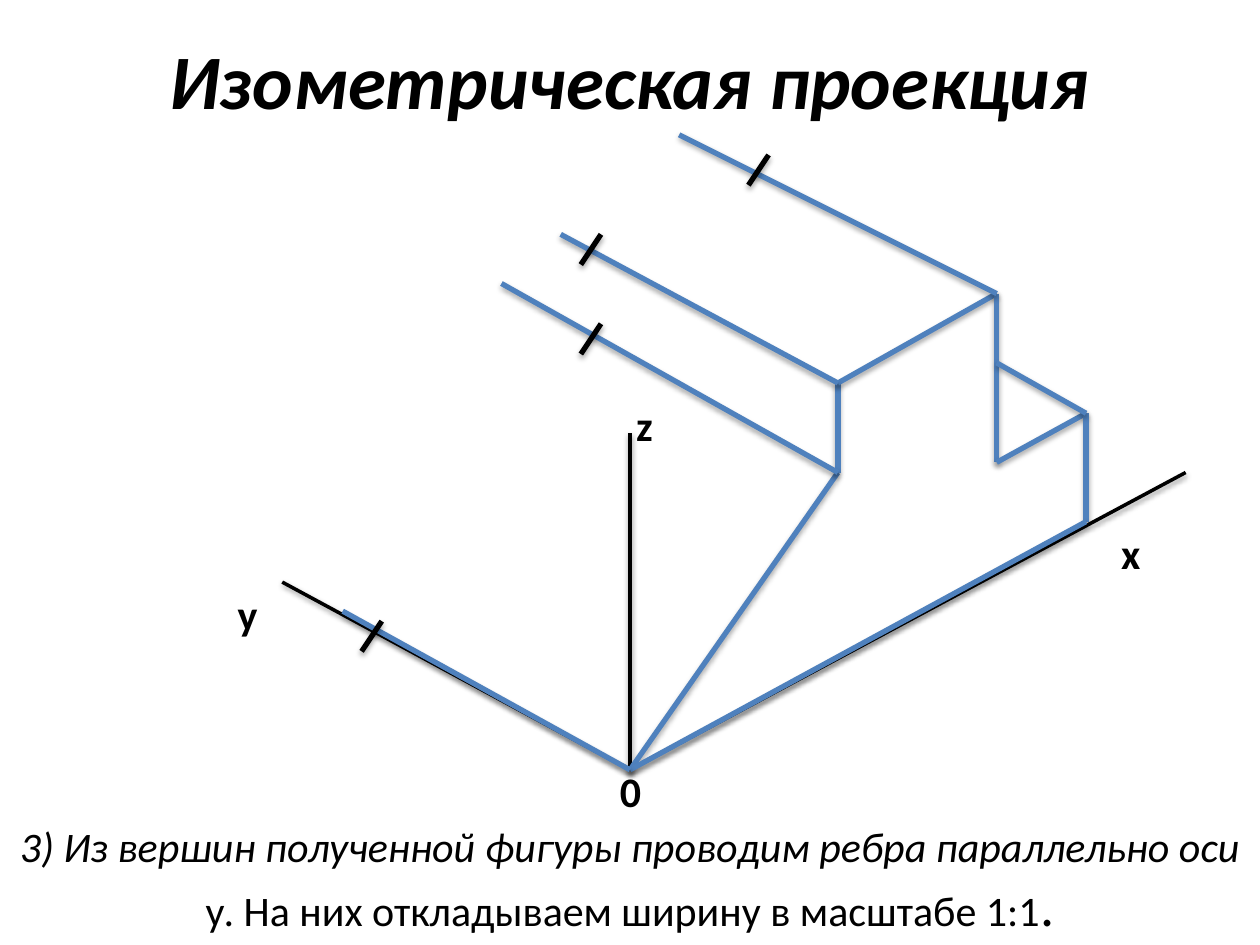
import pptx
import pptx.util
import pptx.dml.color
import pptx.enum.shapes
import pptx.enum.text
import pptx.oxml
import pptx.oxml.ns

Inches, Pt = pptx.util.Inches, pptx.util.Pt
BLACK, BLUE = "000000", "4F81BD"

# Content
TITLE = "Изометрическая проекция"
LABELS = [  # text, left, top, width
    ("у", 1.69, 4.62, 0.55),
    ("z", 4.84, 3.12, 0.55),
    ("x", 8.7, 4.14, 0.55),
    ("0", 4.69, 6.03, 0.63),
]
CAPTION = [
    ("3) Из вершин полученной фигуры проводим ребра параллельно оси ", {"size": Pt(24), "italic": True}),
    ("у. На них откладываем ширину в масштабе 1:1", {"size": Pt(24), "italic": False}),
    (".", {"size": Pt(32), "italic": False}),
]

# Vertices of the front face
ORIGIN = (5, 6.11)
SLOPE_TOP = (6.65, 3.75)
TOP_LEFT = (6.65, 3.04)
TOP_RIGHT = (7.91, 2.33)
STEP_INNER = (7.91, 3.67)
STEP_OUTER = (8.62, 3.28)
BASE_RIGHT = (8.62, 4.14)

AXIS_ENDS = [(2.24, 4.62), (5, 3.44), (9.41, 3.75)]
FACE = [ORIGIN, SLOPE_TOP, TOP_LEFT, TOP_RIGHT, STEP_INNER, STEP_OUTER, BASE_RIGHT, ORIGIN]
DEPTH_EDGES = [
    (ORIGIN, (2.72, 4.85)),
    (SLOPE_TOP, (3.98, 2.25)),
    (TOP_LEFT, (4.45, 1.86)),
    (TOP_RIGHT, (5.39, 1.07)),
    (STEP_OUTER, (7.91, 2.88)),
]
TICKS = [(2.87, 4.93), (4.61, 2.57), (5.94, 1.23), (4.61, 1.86)]  # left, top
TICK_WIDTH, TICK_HEIGHT = 0.16, 0.24


def color(value):
    return pptx.dml.color.RGBColor.from_string(value)


def style(target, **values):
    for name, value in values.items():
        setattr(target, name, value)


def add_span(para, text, **values):
    span = para.add_run()
    span.text = text
    style(span.font, name="Calibri", **values)
    span.font.color.rgb = color(BLACK)


def add_box(left, top, width, height, spans):
    box = page.shapes.add_textbox(Inches(left), Inches(top), Inches(width), Inches(height))
    style(box.text_frame, word_wrap=True, auto_size=pptx.enum.text.MSO_AUTO_SIZE.SHAPE_TO_FIT_TEXT)
    para = box.text_frame.paragraphs[0]
    para.alignment = pptx.enum.text.PP_ALIGN.CENTER
    for text, values in spans:
        add_span(para, text, **values)


def add_line(start, end, line_color, width, distance=1.8, opacity=35):
    line = page.shapes.add_connector(
        pptx.enum.shapes.MSO_CONNECTOR.STRAIGHT, *(Inches(value) for value in (*start, *end)))
    line.line.color.rgb = color(line_color)
    line.line.width = Pt(width)
    # Soft shadow straight below the line
    line._element.spPr.append(pptx.oxml.parse_xml(
        f'<a:effectLst {pptx.oxml.ns.nsdecls("a")}>'
        f'<a:outerShdw blurRad="{Pt(3.1)}" dist="{Pt(distance)}" dir="5400000" rotWithShape="0">'
        f'<a:srgbClr val="{BLACK}"><a:alpha val="{opacity * 1000}"/></a:srgbClr>'
        '</a:outerShdw></a:effectLst>'))


deck = pptx.Presentation()
style(deck, slide_width=Inches(10), slide_height=Inches(7.5))
page = deck.slides.add_slide(deck.slide_layouts[5])

# Title
title = page.shapes.title
style(title, left=Inches(0), top=Inches(0), width=Inches(10), height=Inches(1.25))
title.text_frame.vertical_anchor = pptx.enum.text.MSO_ANCHOR.MIDDLE
heading = title.text_frame.paragraphs[0]
heading.alignment = pptx.enum.text.PP_ALIGN.CENTER
add_span(heading, TITLE, size=Pt(44), bold=True, italic=True)

# Axes and their labels
for end in AXIS_ENDS:
    add_line(ORIGIN, end, BLACK, 2, distance=1.6, opacity=38)
for text, left, top, width in LABELS:
    add_box(left, top, width, 0.5, [(text, {"size": Pt(24), "bold": True})])

# Front face, then edges parallel to the y axis
for start, end in [*zip(FACE, FACE[1:]), *DEPTH_EDGES]:
    add_line(start, end, BLUE, 3)

# Width marks
for left, top in TICKS:
    add_line((left + TICK_WIDTH, top), (left, top + TICK_HEIGHT), BLACK, 3)

# Caption
add_box(0, 6.46, 10, 1.04, CAPTION)

deck.save("out.pptx")
